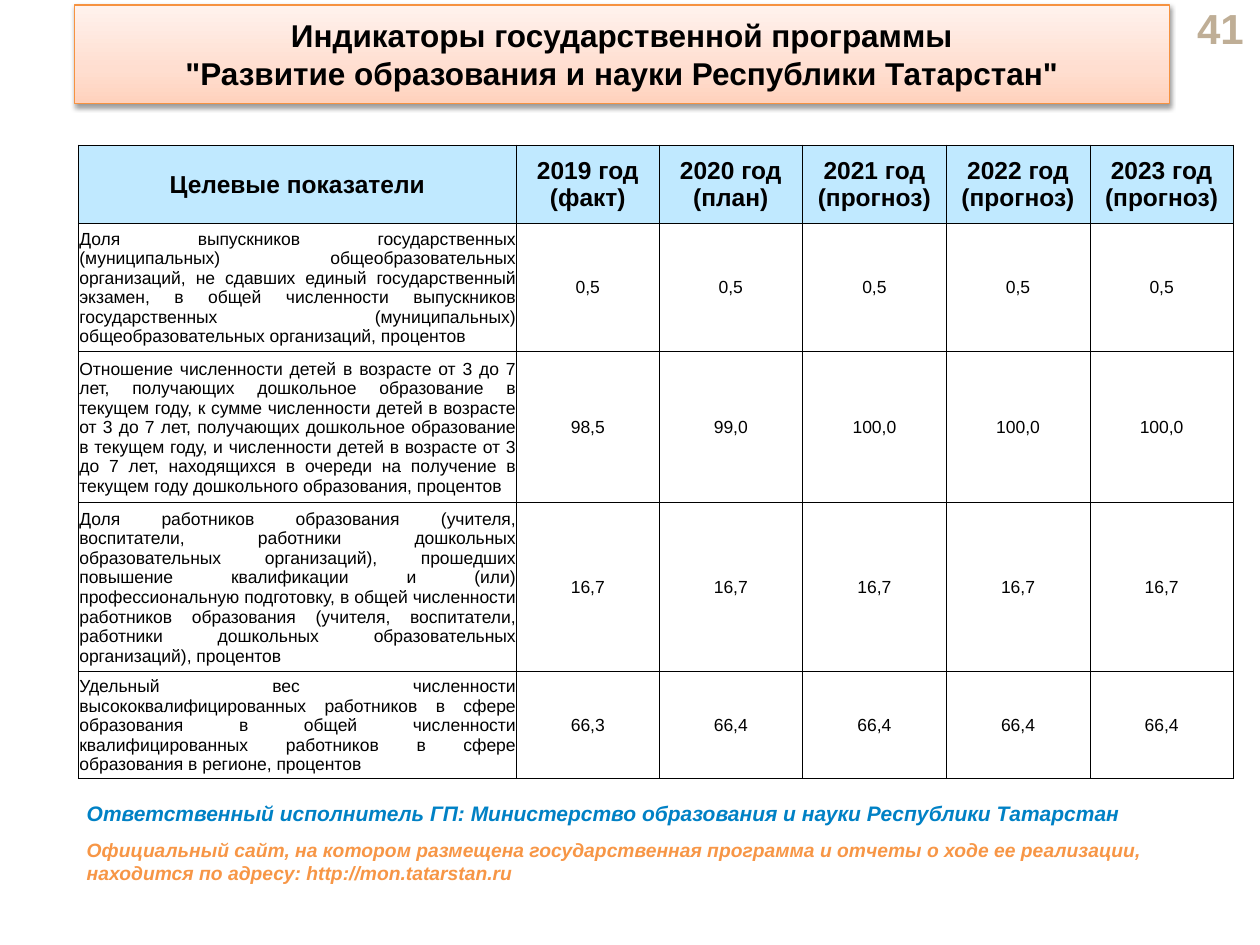
"""Build the slide of indicators of the education and science programme."""
from lxml import etree
from pptx import Presentation, util as u
from pptx.dml.color import RGBColor
from pptx.enum import text
from pptx.oxml import parse_xml

FONT = "Arial"
NS = 'xmlns:a="http://schemas.openxmlformats.org/drawingml/2006/main"'
HEADING = 'Индикаторы государственной программы\v"Развитие образования и науки Республики Татарстан"'
HEADERS = ["Целевые показатели", "2019 год (факт)", "2020 год (план)",
           "2021 год (прогноз)", "2022 год (прогноз)", "2023 год (прогноз)"]
INDICATORS = [
    ("Доля выпускников государственных (муниципальных) общеобразовательных организаций, "
     "не сдавших единый государственный экзамен, в общей численности выпускников "
     "государственных (муниципальных) общеобразовательных организаций, процентов",
     "0,5", "0,5", "0,5", "0,5", "0,5"),
    ("Отношение численности детей в возрасте от 3 до 7 лет, получающих дошкольное "
     "образование в текущем году, к сумме численности детей в возрасте от 3 до 7 лет, "
     "получающих дошкольное образование в текущем году, и численности детей в возрасте "
     "от 3 до 7 лет, находящихся в очереди на получение в текущем году дошкольного "
     "образования, процентов",
     "98,5", "99,0", "100,0", "100,0", "100,0"),
    ("Доля работников образования (учителя, воспитатели, работники дошкольных "
     "образовательных организаций), прошедших повышение квалификации и (или) "
     "профессиональную подготовку, в общей численности работников образования (учителя, "
     "воспитатели, работники дошкольных образовательных организаций), процентов",
     "16,7", "16,7", "16,7", "16,7", "16,7"),
    ("Удельный вес численности высококвалифицированных работников в сфере образования "
     "в общей численности квалифицированных работников в сфере образования в регионе, "
     "процентов",
     "66,3", "66,4", "66,4", "66,4", "66,4"),
]
COLUMNS = [3.48, 1.13] + [1.14] * 4
ROWS = [0.62, 1.02, 1.2, 1.34, 0.85]
LEFT = 0.59
NOTES = [
    ((9.11, 0.05, 0.86, 0.34), "41", 24, "BFAE96", False, text.PP_ALIGN.RIGHT),
    ((LEFT, 6.3, 9.27, 0.3),
     "Ответственный исполнитель ГП: Министерство образования и науки Республики Татарстан",
     12, "0081C5", True, text.PP_ALIGN.LEFT),
    ((LEFT, 6.6, 9.14, 0.47),
     "Официальный сайт, на котором размещена государственная программа и отчеты о ходе ее "
     "реализации, находится по адресу: http://mon.tatarstan.ru",
     11, "F79646", True, text.PP_ALIGN.LEFT),
]
GRADIENT = [(0, "FFD2BD"), (35, "FFDED0"), (100, "FFF2ED")]


def color(value):
    return RGBColor.from_string(value)


def write(frame, words, size, tint="000000", bold=True, italic=False,
          align=text.PP_ALIGN.CENTER):
    frame.text = words
    frame.word_wrap = True
    frame.vertical_anchor = text.MSO_ANCHOR.MIDDLE
    paragraph = frame.paragraphs[0]
    paragraph.alignment = align
    font = paragraph.font
    font.name, font.size, font.bold, font.italic = FONT, u.Pt(size), bold, italic
    font.color.rgb = color(tint)


def add_heading(slide):
    heading = slide.shapes.title
    heading.left, heading.top, heading.width, heading.height = map(
        u.Inches, (LEFT, 0.04, 8.69, 0.78))
    stops = "".join(f'<a:gs pos="{pos * 1000}"><a:srgbClr val="{tint}"/></a:gs>'
                    for pos, tint in GRADIENT)
    properties = heading.element.spPr
    for xml in (
        f'<a:prstGeom {NS} prst="roundRect"><a:avLst/></a:prstGeom>',
        f'<a:gradFill {NS} rotWithShape="1"><a:gsLst>{stops}</a:gsLst>'
        '<a:lin ang="16200000" scaled="1"/></a:gradFill>',
        f'<a:effectLst {NS}><a:outerShdw blurRad="{u.Pt(3.1)}" dist="{u.Pt(1.6)}" '
        'dir="5400000" rotWithShape="0"><a:srgbClr val="000000"><a:alpha val="38000"/>'
        '</a:srgbClr></a:outerShdw></a:effectLst>',
    ):
        properties.append(parse_xml(xml))
    heading.line.color.rgb = color("F69240")
    heading.line.width = u.Pt(0.75)
    write(heading.text_frame, HEADING, 18)
    heading.text_frame.auto_size = text.MSO_AUTO_SIZE.NONE


def add_borders(cell):
    properties = cell._tc.get_or_add_tcPr()
    for position, side in enumerate(("lnL", "lnR", "lnT", "lnB")):
        properties.insert(position, etree.fromstring(
            f'<a:{side} {NS} w="{u.Pt(0.25)}"><a:solidFill><a:srgbClr val="000000"/>'
            f'</a:solidFill></a:{side}>'))


def add_indicators(slide):
    table = slide.shapes.add_table(
        len(ROWS), len(COLUMNS), *map(u.Inches, (0.62, 1.15, sum(COLUMNS), sum(ROWS)))).table
    for column, width in zip(table.columns, COLUMNS):
        column.width = u.Inches(width)
    for row, height in zip(table.rows, ROWS):
        row.height = u.Inches(height)
    for r, values in enumerate([HEADERS, *INDICATORS]):
        for c, value in enumerate(values):
            cell, header = table.cell(r, c), r == 0
            align = text.PP_ALIGN.CENTER if header or c else text.PP_ALIGN.JUSTIFY
            write(cell.text_frame, value, 14 if header else 10, bold=header, align=align)
            cell.vertical_anchor = text.MSO_ANCHOR.MIDDLE
            cell.margin_left = cell.margin_right = cell.margin_top = u.Inches(0.01)
            cell.margin_bottom = 0
            if header:
                cell.fill.solid()
                cell.fill.fore_color.rgb = color("C0E9FF")
            else:
                cell.fill.background()
            add_borders(cell)


def main():
    deck = Presentation()
    deck.slide_width, deck.slide_height = u.Inches(10), u.Inches(7.5)
    slide = deck.slides.add_slide(deck.slide_layouts[5])
    add_heading(slide)
    add_indicators(slide)
    for place, words, size, tint, italic, align in NOTES:
        note = slide.shapes.add_textbox(*map(u.Inches, place))
        write(note.text_frame, words, size, tint, italic=italic, align=align)
    deck.save("out.pptx")


if __name__ == "__main__":
    main()
